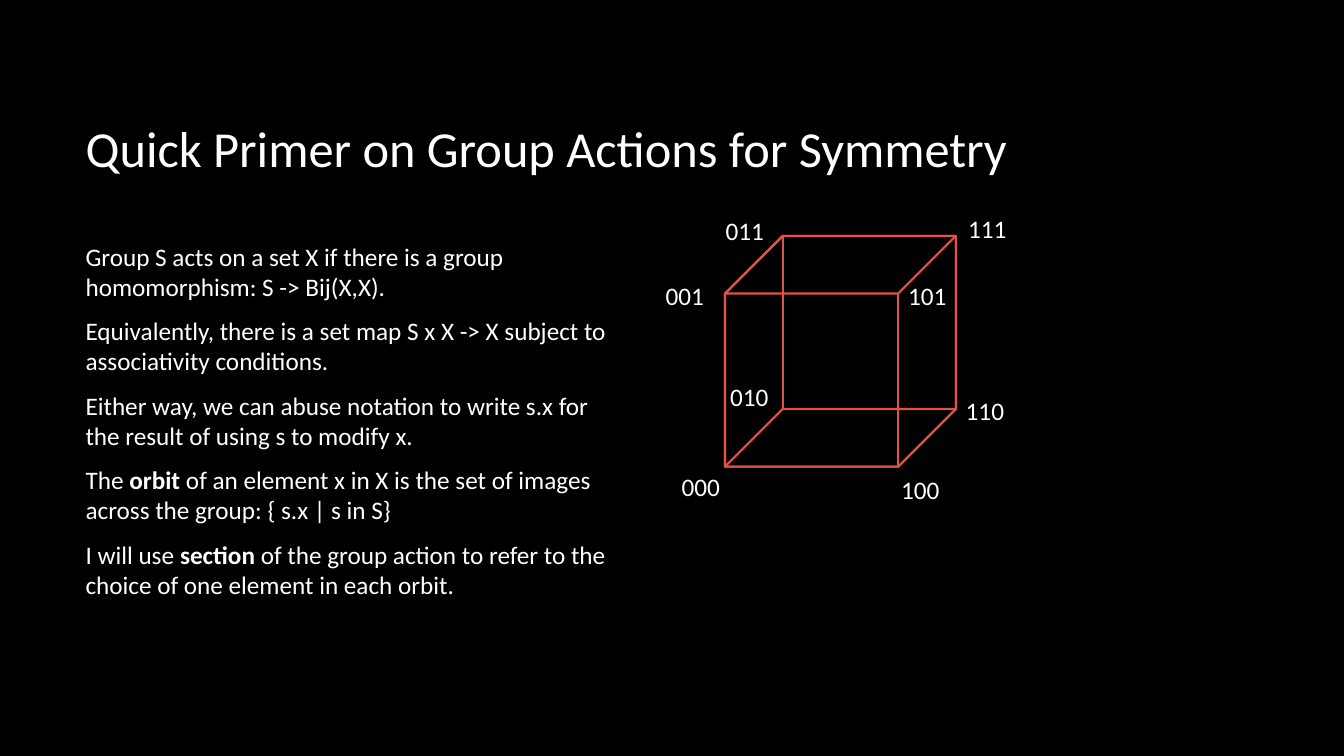
from dataclasses import dataclass

from pptx import Presentation
from pptx import util as u
from pptx.dml.color import RGBColor
from pptx.enum import shapes, text


@dataclass(frozen=True)
class Theme:
    font: str = "Calibri"
    background: RGBColor = RGBColor(0x00, 0x00, 0x00)
    ink: RGBColor = RGBColor(0xFF, 0xFF, 0xFF)
    edge: RGBColor = RGBColor(0xE2, 0x52, 0x47)
    title_size: u.Pt = u.Pt(36)
    body_size: u.Pt = u.Pt(18)
    paragraph_gap: u.Pt = u.Pt(10)
    edge_width: u.Pt = u.Pt(1.5)


THEME = Theme()
WIDTH, HEIGHT = u.Inches(13.33), u.Inches(7.5)

TITLE = "Quick Primer on Group Actions for Symmetry"
# Asterisks enclose bold terms.
PRIMER = [
    "Group S acts on a set X if there is a group homomorphism: S -> Bij(X,X).",
    "Equivalently, there is a set map S x X -> X subject to associativity conditions.",
    "Either way, we can abuse notation to write s.x for the result of using s to modify x.",
    "The *orbit* of an element x in X is the set of images across the group: { s.x | s in S}",
    "I will use *section* of the group action to refer to the choice of one element in each orbit.",
]
# Label offset from its vertex, as shares of the cube's side.
LABEL_OFFSETS = {
    "000": (-0.23, 0),
    "100": (-0.03, 0.01),
    "010": (-0.27, -0.14),
    "001": (-0.3, -0.08),
    "011": (-0.29, -0.11),
    "110": (0, -0.08),
    "111": (0.01, -0.12),
    "101": (0, -0.08),
}
LABEL_WIDTH, LABEL_HEIGHT = 0.26, 0.17
CUBE_DEPTH = 0.25


def slide_box(left, top, width, height):
    """Turn percentages of the slide's size into a box."""
    return (int(WIDTH * left / 100), int(HEIGHT * top / 100),
            int(WIDTH * width / 100), int(HEIGHT * height / 100))


def style_run(r, size, bold=False):
    r.font.name = THEME.font
    r.font.size = size
    r.font.bold = bold
    r.font.color.rgb = THEME.ink


def add_title(s, box):
    sp = s.shapes.title
    sp.left, sp.top, sp.width, sp.height = box
    tf = sp.text_frame
    tf.text = TITLE
    tf.vertical_anchor = text.MSO_ANCHOR.MIDDLE
    p = tf.paragraphs[0]
    p.alignment = text.PP_ALIGN.LEFT
    style_run(p.runs[0], THEME.title_size)


def add_primer(s, box):
    tf = s.shapes.add_textbox(*box).text_frame
    tf.word_wrap = True
    for i, line in enumerate(PRIMER):
        p = tf.add_paragraph() if i else tf.paragraphs[0]
        p.space_after = THEME.paragraph_gap
        for j, part in enumerate(line.split("*")):
            r = p.add_run()
            r.text = part
            style_run(r, THEME.body_size, bold=j % 2 == 1)


def add_vertex_label(s, name, box):
    tf = s.shapes.add_textbox(*box).text_frame
    tf.text = name
    tf.word_wrap = False
    tf.auto_size = text.MSO_AUTO_SIZE.SHAPE_TO_FIT_TEXT
    style_run(tf.paragraphs[0].runs[0], THEME.body_size)


def add_labelled_cube(s, box):
    """Overlay a cube and its half turn to show all edges, then name the vertices."""
    left, top, width, height = box
    for rotation in (0, 180):
        sp = s.shapes.add_shape(shapes.MSO_SHAPE.CUBE, *box)
        sp.rotation = rotation
        sp.adjustments[0] = CUBE_DEPTH
        sp.shadow.inherit = False
        sp.fill.background()
        sp.line.color.rgb = THEME.edge
        sp.line.width = THEME.edge_width
    for name, (dx, dy) in LABEL_OFFSETS.items():
        right, back, up = map(int, name)
        x = right * (1 - CUBE_DEPTH) + back * CUBE_DEPTH + dx
        y = 1 - up * (1 - CUBE_DEPTH) - back * CUBE_DEPTH + dy
        add_vertex_label(s, name, (int(left + x * width), int(top + y * height),
                                   int(LABEL_WIDTH * width), int(LABEL_HEIGHT * height)))


def main():
    prs = Presentation()
    prs.slide_width, prs.slide_height = WIDTH, HEIGHT
    s = prs.slides.add_slide(prs.slide_layouts.get_by_name("Title Only"))
    s.background.fill.solid()
    s.background.fill.fore_color.rgb = THEME.background
    add_title(s, slide_box(5.63, 8.93, 83.12, 21.2))
    add_primer(s, slide_box(5.63, 31.2, 40.96, 53.2))
    add_labelled_cube(s, slide_box(53.94, 31.2, 17.18, 30.53))
    prs.save("out.pptx")


if __name__ == "__main__":
    main()
